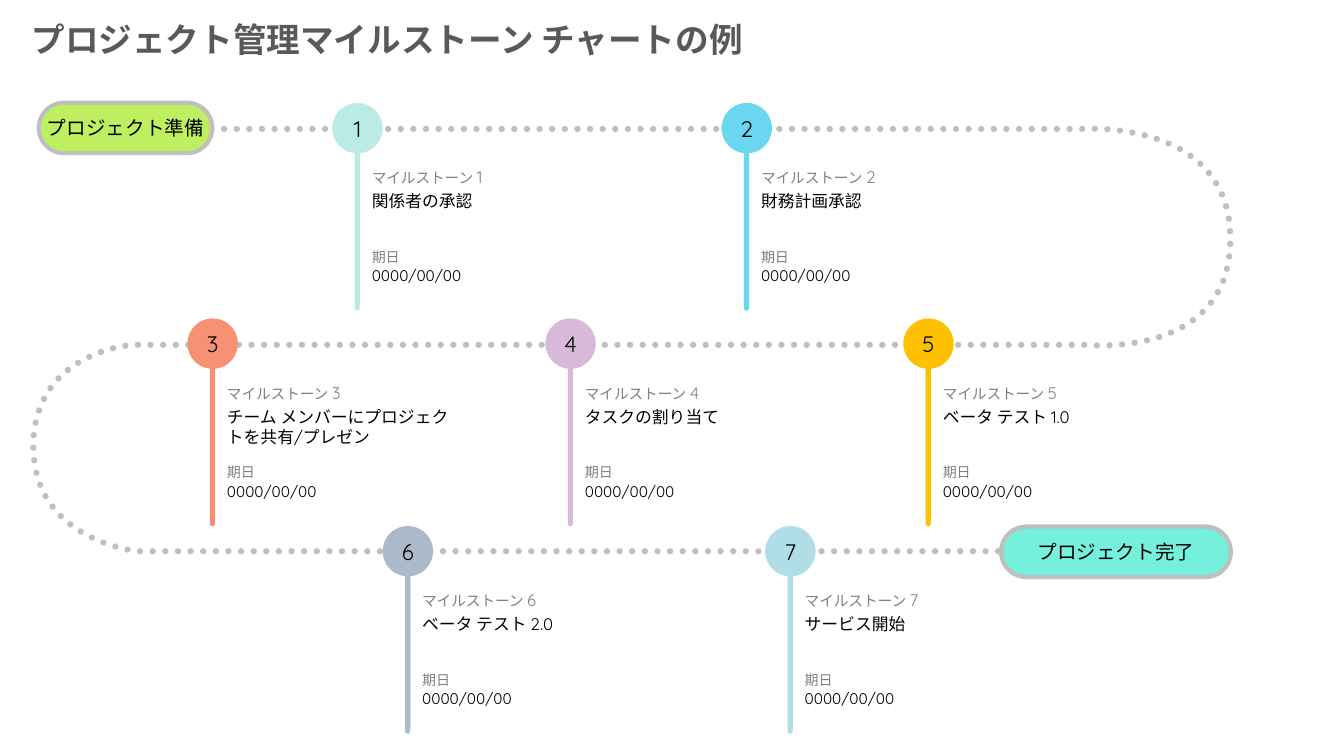
import lxml.etree
import pptx
import pptx.dml.color
import pptx.enum.dml
import pptx.enum.shapes
import pptx.enum.text
import pptx.oxml.ns
import pptx.util
from pptx.util import Cm, Pt

FONT = "Quicksand"
COLORS = {
    "title": "595959", "track": "BFBFBF", "text": "000000", "caption": "808080",
    "start": "BEEF60", "finish": "75F0DC",
    "mint": "BBEBE5", "sky": "6BD6F0", "coral": "F79173", "lilac": "D9B9D9",
    "amber": "FFC000", "slate": "ADB9CA", "ice": "B1DDE6",
}
ROWS = [3.23, 8.66, 13.89]
DUE_DATE = "0000/00/00"
CIRCLE = 1.27
# row, centre x, colour, task, task width
MILESTONES = [
    (0, 9.01, "mint", "関係者の承認", 3.48),
    (0, 18.82, "sky", "財務計画承認", 3.48),
    (1, 5.36, "coral", "チーム メンバーにプロジェクトを共有/プレゼン", 5.94),
    (1, 14.38, "lilac", "タスクの割り当て", 3.48),
    (1, 23.4, "amber", "ベータ テスト 1.0", 3.48),
    (2, 10.28, "slate", "ベータ テスト 2.0", 3.48),
    (2, 19.92, "ice", "サービス開始", 3.48),
]
TRACK_START = (5.33, 3.25)
# Each stretch is one end point, or two control points and an end point.
TRACK = [
    [(27.25, 3.25)],
    [(27.25, 3.25), (31.01, 2.97), (31.01, 6.02)],
    [(31.01, 9.07), (27.38, 8.69), (27.38, 8.69)],
    [(3.33, 8.69)],
    [(3.33, 8.69), (0.84, 8.86), (0.84, 11.25)],
    [(0.84, 13.64), (3.48, 13.89), (3.48, 13.89)],
    [(26.11, 13.89)],
]


def rgb(name):
    return pptx.dml.color.RGBColor.from_string(COLORS[name])


def set_font(paragraph, size, color, bold=False):
    font = paragraph.font
    font.name, font.size, font.bold = FONT, Pt(size), bold
    font.color.rgb = rgb(color)


def clear_margins(frame):
    frame.margin_left = frame.margin_right = 0
    frame.margin_top = frame.margin_bottom = 0
    frame.word_wrap = True


def add_title(slide, text):
    title = slide.shapes.title
    title.left, title.top = Cm(0.54), Cm(0.36)
    title.width, title.height = Cm(22.63), Cm(1.27)
    frame = title.text_frame
    frame.text = text
    frame.auto_size = pptx.enum.text.MSO_AUTO_SIZE.NONE
    frame.vertical_anchor = pptx.enum.text.MSO_ANCHOR.MIDDLE
    frame.paragraphs[0].alignment = pptx.enum.text.PP_ALIGN.LEFT
    set_font(frame.paragraphs[0], 24, "title", bold=True)


def curve_points(start, controls, steps=24):
    """Return points along a cubic Bezier curve, leaving out its start."""
    corners = [start, *controls]
    points = []
    for step in range(1, steps + 1):
        t = step / steps
        weights = ((1 - t) ** 3, 3 * t * (1 - t) ** 2, 3 * t * t * (1 - t), t ** 3)
        points.append(tuple(sum(w * corner[axis] for w, corner in zip(weights, corners))
                            for axis in (0, 1)))
    return points


def add_track(slide):
    points = [TRACK_START]
    for stretch in TRACK:
        points += stretch if len(stretch) == 1 else curve_points(points[-1], stretch)
    first, *others = [(Cm(x), Cm(y)) for x, y in points]
    builder = slide.shapes.build_freeform(*first)
    builder.add_line_segments(others, close=False)
    track = builder.convert_to_shape()
    track.shadow.inherit = False
    track.fill.background()
    track.line.color.rgb = rgb("track")
    track.line.width = Pt(4.5)
    track.line.dash_style = pptx.enum.dml.MSO_LINE.ROUND_DOT
    outline = track.element.spPr.find(pptx.oxml.ns.qn("a:ln"))
    outline.set("cap", "rnd")
    lxml.etree.SubElement(outline, pptx.oxml.ns.qn("a:round"))


def add_filled(shapes, kind, left, top, width, height, color):
    shape = shapes.add_shape(kind, Cm(left), Cm(top), Cm(width), Cm(height))
    shape.shadow.inherit = False
    shape.fill.solid()
    shape.fill.fore_color.rgb = rgb(color)
    shape.line.fill.background()
    if kind == pptx.enum.shapes.MSO_SHAPE.ROUNDED_RECTANGLE:
        shape.adjustments[0] = 0.5
    return shape


def center_text(shape, text, size):
    frame = shape.text_frame
    clear_margins(frame)
    frame.text = text
    frame.vertical_anchor = pptx.enum.text.MSO_ANCHOR.MIDDLE
    frame.paragraphs[0].alignment = pptx.enum.text.PP_ALIGN.CENTER
    set_font(frame.paragraphs[0], size, "text")


def add_terminal(slide, left, top, width, color, text):
    """Add the pill at one end of the track."""
    pill = add_filled(slide.shapes, pptx.enum.shapes.MSO_SHAPE.ROUNDED_RECTANGLE,
                      left, top, width, 1.27, color)
    pill.line.color.rgb = rgb("track")
    pill.line.width = Pt(3)
    center_text(pill, text, 14)


def add_text(shapes, left, top, width, height, runs, color):
    """Add a one-paragraph box from (text, size) runs."""
    box = shapes.add_textbox(Cm(left), Cm(top), Cm(width), Cm(height))
    clear_margins(box.text_frame)
    paragraph = box.text_frame.paragraphs[0]
    set_font(paragraph, runs[0][1], color)
    for text, size in runs:
        run = paragraph.add_run()
        run.text = text
        if len(runs) > 1:
            run.font.size = Pt(size)
    return paragraph


def add_milestone(slide, number, row, center_x, color, task, task_width):
    shapes = slide.shapes.add_group_shape().shapes
    center_y = ROWS[row]
    text_left = center_x + 0.36
    add_filled(shapes, pptx.enum.shapes.MSO_SHAPE.ROUNDED_RECTANGLE,
               center_x - 0.07, center_y - 0.15, 0.13, 4.75, color)
    add_text(shapes, text_left, center_y + 0.98, 3.1, 0.66,
             [("マイルストーン", 10.5), (" ", 11), (str(number), 12)], "caption")
    add_text(shapes, text_left, center_y + 1.58, task_width, 1.45, [(task, 12)], "text")
    due = add_text(shapes, text_left, center_y + 3.02, 2.03, 0.51, [("期日", 10)], "caption")
    due.space_after = Pt(3)
    add_text(shapes, text_left, center_y + 3.48, 2.29, 0.66, [(DUE_DATE, 11)], "text")
    circle = add_filled(shapes, pptx.enum.shapes.MSO_SHAPE.OVAL, center_x - CIRCLE / 2,
                        center_y - CIRCLE / 2, CIRCLE, CIRCLE, color)
    center_text(circle, str(number), 16)


def main():
    deck = pptx.Presentation()
    deck.slide_width, deck.slide_height = Cm(33.87), Cm(19.05)
    slide = deck.slides.add_slide(deck.slide_layouts[5])
    add_title(slide, "プロジェクト管理マイルストーン チャートの例")
    add_track(slide)
    add_terminal(slide, 0.98, 2.59, 4.37, "start", "プロジェクト準備")
    for number, milestone in enumerate(MILESTONES, start=1):
        add_milestone(slide, number, *milestone)
    add_terminal(slide, 25.23, 13.27, 5.79, "finish", "プロジェクト完了")
    deck.save("out.pptx")


if __name__ == "__main__":
    main()
